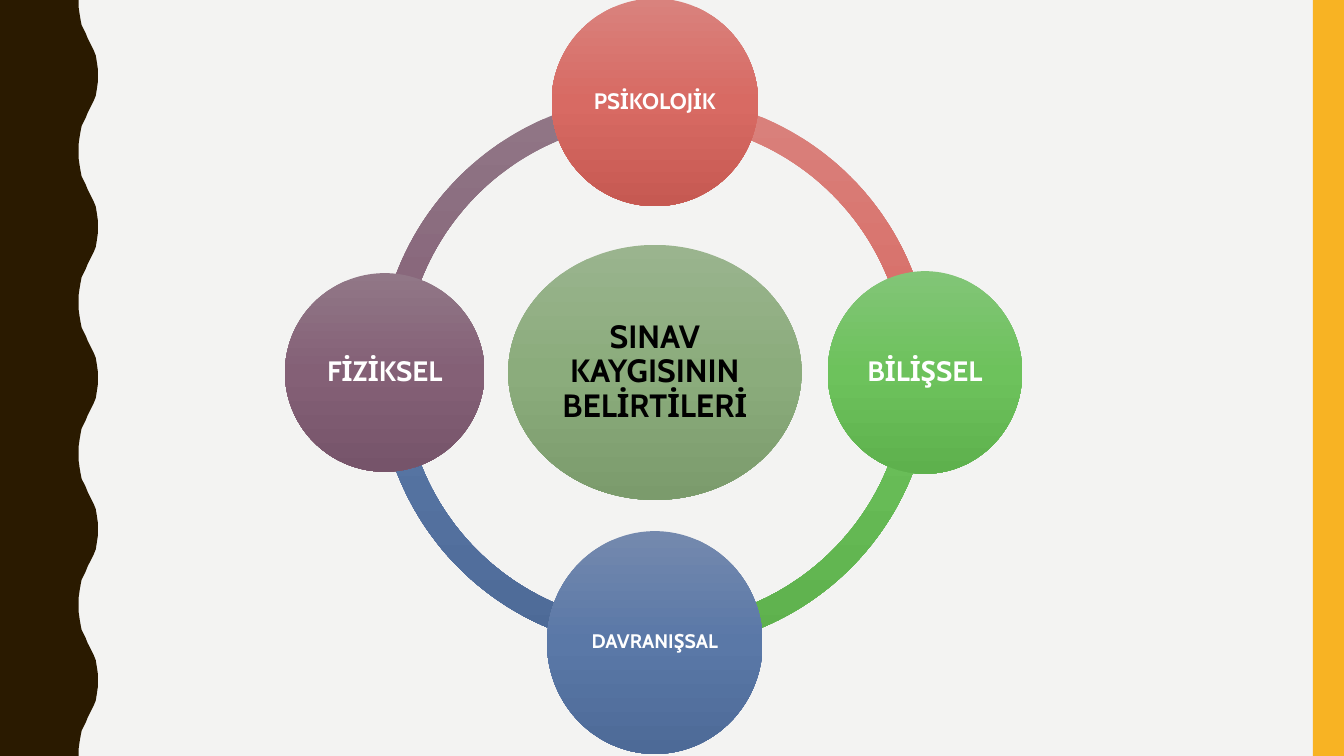
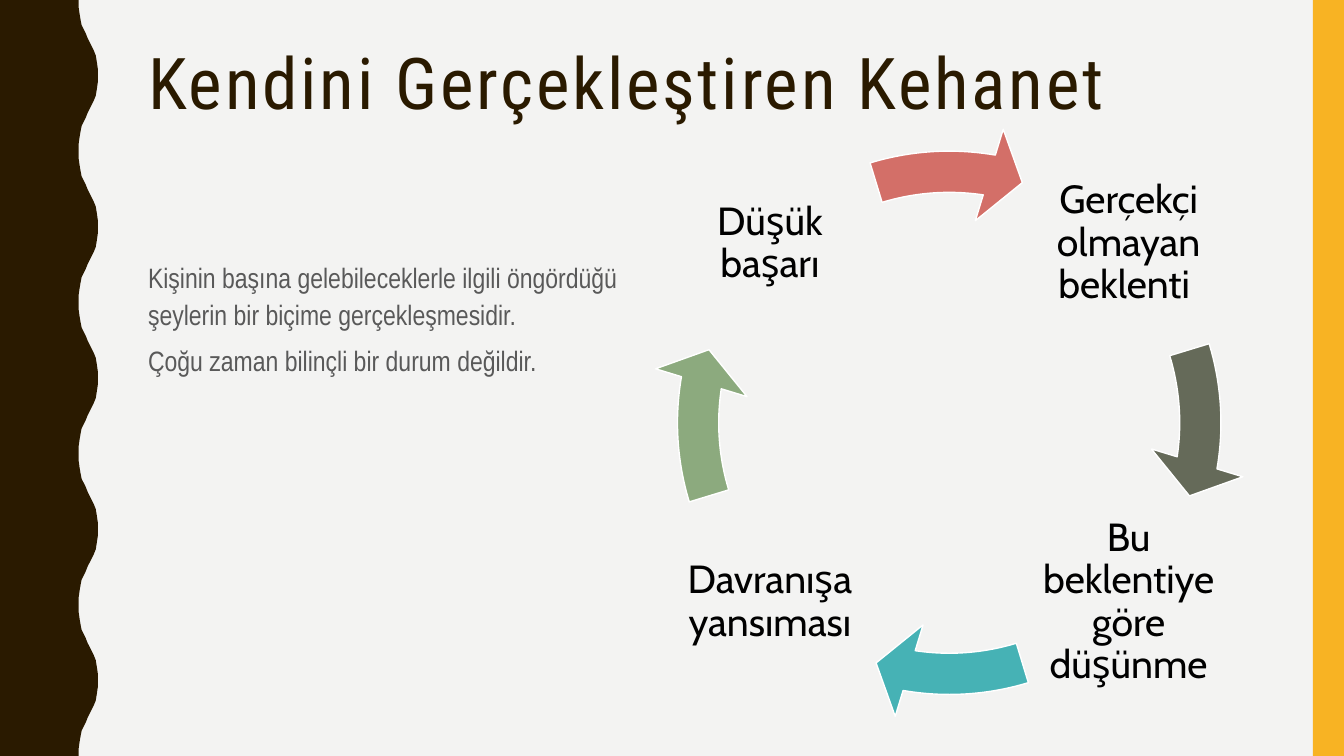
from copy import deepcopy
from math import cos, radians, sin

from pptx import Presentation
from pptx.dml.color import RGBColor
from pptx.enum.shapes import MSO_SHAPE
from pptx.enum.text import MSO_ANCHOR, MSO_AUTO_SIZE, PP_ALIGN
from pptx.oxml.ns import qn
from pptx.util import Inches, Pt

WIDTH, HEIGHT = 13.33, 7.5
TITLE_ONLY, BLANK = 5, 6
DEGREE = 0.6  # one degree in adjustment units

COLOURS = {
    "background": "F3F3F2", "brown": "2A1A00", "yellow": "F8B323",
    "body": "595959", "black": "000000", "white": "FFFFFF",
    "olive": "656A59", "teal": "46B2B5", "sage": "8CAA7E", "coral": "D36F68",
}
GRADIENTS = {
    "purple": ("917787", "846076", "76546A"),
    "blue": ("7489AE", "5A78A7", "4D6A97"),
    "green": ("82C577", "6DC25C", "5EB14D"),
    "red": ("D9827D", "D86A63", "C65952"),
    "sage": ("9AB48E", "8BAC7C", "7B9B6C"),
}
# Half a wave of the left band, as x and y in inches
WAVE_X = (0.78, 0.78, 0.79, 0.8, 0.81, 0.83, 0.85, 0.87,
          0.89, 0.91, 0.93, 0.95, 0.96, 0.97, 0.97)
WAVE_Y = (0, 0.07, 0.14, 0.2, 0.25, 0.29, 0.33, 0.38,
          0.42, 0.46, 0.5, 0.55, 0.61, 0.68, 0.75)
WAVE_LENGTH = 1.5


# Shared helpers
def rgb(name):
    return RGBColor.from_string(COLOURS[name])


def fill_solid(shape, colour):
    shape.shadow.inherit = False
    shape.fill.solid()
    shape.fill.fore_color.rgb = rgb(colour)
    shape.line.fill.background()


def fill_gradient(shape, gradient):
    shape.shadow.inherit = False
    shape.line.fill.background()
    shape.fill.gradient()
    shape.fill.gradient_angle = 270
    stop_list = next(shape._element.iter(qn("a:gsLst")))
    stop_list.append(deepcopy(stop_list[0]))
    for stop, position, colour in zip(
            shape.fill.gradient_stops, (0, 0.5, 1), GRADIENTS[gradient]):
        stop.position = position
        stop.color.rgb = RGBColor.from_string(colour)


def add_preset(slide, preset, box, adjustments=()):
    shape = slide.shapes.add_shape(preset, *map(Inches, box))
    for index, value in enumerate(adjustments):
        shape.adjustments[index] = value
    return shape


def centred_box(centre_x, centre_y, width, height):
    return centre_x - width / 2, centre_y - height / 2, width, height


def write(shape, paragraphs, font, size, colour, bold=False, spacing=0.9,
          before=0, align=PP_ALIGN.LEFT, anchor=MSO_ANCHOR.TOP, inset=None):
    frame = shape.text_frame
    frame.word_wrap = True
    frame.auto_size = MSO_AUTO_SIZE.NONE
    frame.vertical_anchor = anchor
    if inset is not None:
        frame.margin_left = frame.margin_right = Inches(inset)
        frame.margin_top = frame.margin_bottom = Inches(inset)
    frame.text = "\n".join(paragraphs)
    for paragraph in frame.paragraphs:
        paragraph.alignment = align
        paragraph.line_spacing = spacing
        paragraph.space_before = Pt(before)
        paragraph.font.name = font
        paragraph.font.size = Pt(size)
        paragraph.font.bold = bold
        paragraph.font.color.rgb = rgb(colour)


def write_label(shape, text, size, colour, bold, inset):
    write(shape, [text], "Cabin", size, colour, bold, align=PP_ALIGN.CENTER,
          anchor=MSO_ANCHOR.MIDDLE, inset=inset)


# Wavy band on the left and plain band on the right
def add_bands(slide):
    points = []
    half_wave = list(zip(WAVE_X, WAVE_Y))
    for wave in range(round(HEIGHT / WAVE_LENGTH)):
        top = wave * WAVE_LENGTH
        points += [(x, top + y) for x, y in half_wave]
        points += [(x, top + WAVE_LENGTH - y) for x, y in reversed(half_wave)]
    points.append((0, HEIGHT))
    builder = slide.shapes.build_freeform(0, 0)
    builder.add_line_segments([(Inches(x), Inches(y)) for x, y in points])
    fill_solid(builder.convert_to_shape(), "brown")
    fill_solid(add_preset(slide, MSO_SHAPE.RECTANGLE,
                          (WIDTH - 0.31, 0, 0.31, HEIGHT)), "yellow")


def add_slide(presentation, layout):
    slide = presentation.slides.add_slide(presentation.slide_layouts[layout])
    add_bands(slide)
    return slide


def add_title(slide, text, box):
    title = slide.shapes.title
    title.left, title.top, title.width, title.height = map(Inches, box)
    write(title, [text], "Roboto Condensed", 51, "brown")
    for run in title.text_frame.paragraphs[0].runs:
        run.font._element.set("spc", "200")


# Ring of four circles around a hub
def add_symptom_ring(slide, box):
    left, top, side, _ = box
    centre_x, centre_y = left + side / 2, top + side / 2
    orbit = side * 0.488
    for start, gradient in ((180, "purple"), (90, "blue"),
                            (0, "green"), (270, "red")):
        angles = (start * DEGREE, (start + 90) % 360 * DEGREE)
        arc = add_preset(slide, MSO_SHAPE.BLOCK_ARC, box, (*angles, 0.046))
        fill_gradient(arc, gradient)

    hub = add_preset(slide, MSO_SHAPE.OVAL,
                     centred_box(centre_x, centre_y, 2.91, 2.53))
    fill_gradient(hub, "sage")
    write_label(hub, "SINAV KAYGISININ BELİRTİLERİ", 23, "black", True, 0.03)

    symptoms = (
        ("PSİKOLOJİK", 270, 2.05, 2.06, 16, "red"),
        ("BİLİŞSEL", 0, 1.93, 2.01, 20, "green"),
        ("DAVRANIŞSAL", 90, 2.14, 2.21, 14, "blue"),
        ("FİZİKSEL", 180, 1.98, 1.97, 20, "purple"),
    )
    for text, angle, width, height, size, gradient in symptoms:
        circle = add_preset(slide, MSO_SHAPE.OVAL, centred_box(
            centre_x + orbit * cos(radians(angle)),
            centre_y + orbit * sin(radians(angle)), width, height))
        fill_gradient(circle, gradient)
        write_label(circle, text, size, "white", True, 0.02)


# Cycle of four labels, each followed by a curved arrow
def add_prophecy_cycle(slide, box):
    left, top, side, _ = box
    centre_x, centre_y = left + side / 2, top + side / 2
    offset, label_side = side * 0.3, 2.1
    steps = (
        ("Gerçekçi olmayan beklenti ", 1, -1, "olive"),
        ("Bu beklentiye göre düşünme", 1, 1, "teal"),
        ("Davranışa yansıması", -1, 1, "sage"),
        ("Düşük başarı", -1, -1, "coral"),
    )
    for index, (text, across, down, colour) in enumerate(steps):
        label = slide.shapes.add_textbox(*map(Inches, centred_box(
            centre_x + across * offset, centre_y + down * offset,
            label_side, label_side)))
        write_label(label, text, 28, "black", False, 0.04)
        turn = 90 * index
        arrow = add_preset(slide, MSO_SHAPE.CIRCULAR_ARROW, box, (
            0.069, 7.75 * DEGREE, (9.18 + turn) * DEGREE,
            (343.07 + turn) % 360 * DEGREE, 0.08))
        fill_solid(arrow, colour)
        arrow.line.color.rgb = rgb("white")
        arrow.line.width = Pt(1)


def build_symptoms_slide(presentation):
    slide = add_slide(presentation, BLANK)
    add_symptom_ring(slide, (3.75, 0.95, 5.49, 5.49))


def build_prophecy_slide(presentation):
    slide = add_slide(presentation, TITLE_ONLY)
    add_title(slide, "Kendini Gerçekleştiren Kehanet",
              (1.37, 0.42, 11.13, 1.63))
    body = slide.shapes.add_textbox(*map(Inches, (1.37, 2.5, 5.62, 3.93)))
    write(body, [
        "Kişinin başına gelebileceklerle ilgili öngördüğü "
        "şeylerin bir biçime gerçekleşmesidir.",
        "Çoğu zaman bilinçli bir durum değildir.",
    ], "Arial Narrow", 20, "body", spacing=1.1, before=7)
    add_prophecy_cycle(slide, (6.45, 1.23, 5.93, 5.93))


def main():
    presentation = Presentation()
    presentation.slide_width = Inches(WIDTH)
    presentation.slide_height = Inches(HEIGHT)
    background = presentation.slide_master.background.fill
    background.solid()
    background.fore_color.rgb = rgb("background")
    build_symptoms_slide(presentation)
    build_prophecy_slide(presentation)
    presentation.save("out.pptx")


if __name__ == "__main__":
    main()
